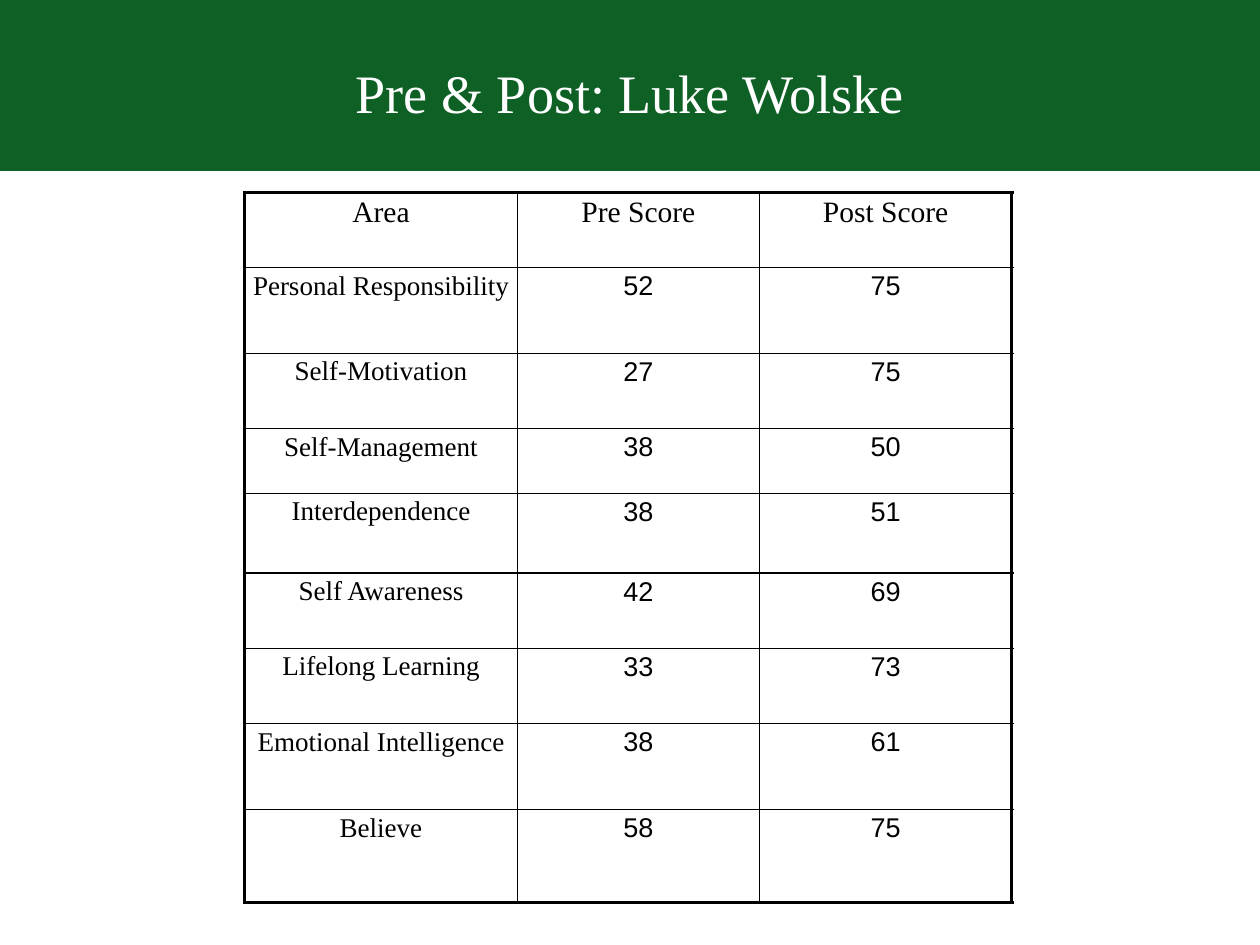
"""Build the slide of scores before and after, by area."""
from typing import Any, NamedTuple

from lxml import etree
from pptx import Presentation
from pptx import dml
from pptx import util as u
from pptx.dml import color as hue
from pptx.enum import shapes, text
from pptx.oxml import ns

GREEN = hue.RGBColor(0x0E, 0x60, 0x25)
WHITE = hue.RGBColor(0xFF, 0xFF, 0xFF)
BLACK = hue.RGBColor(0, 0, 0)
SERIF = "Times New Roman"
SANS = "Arial"
INSET = u.Inches(0.04)
WIDTHS = (3.08, 2.73, 2.85)
HEAD = ("Area", "Pre Score", "Post Score")


class Row(NamedTuple):
    """Hold one scored area and its row height in inches."""
    area: str
    pre: int
    post: int
    height: float


ROWS = (
    Row("Personal Responsibility", 52, 75, 0.97),
    Row("Self-Motivation", 27, 75, 0.85),
    Row("Self-Management", 38, 50, 0.73),
    Row("Interdependence", 38, 51, 0.9),
    Row("Self Awareness", 42, 69, 0.85),
    Row("Lifelong Learning", 33, 73, 0.85),
    Row("Emotional Intelligence", 38, 61, 0.97),
    Row("Believe", 58, 75, 1.05),
)


def apply(item: Any, values: dict[str, Any]) -> None:
    """Set each named attribute of an item."""
    for name, value in values.items():
        setattr(item, name, value)


def inset(item: Any) -> None:
    """Give a cell or text frame even margins."""
    apply(item, {f"margin_{side}": INSET for side in ("left", "top", "right", "bottom")})


def write(frame: Any, words: str, face: str, size: int, tint: hue.RGBColor) -> None:
    """Write one centred line in a text frame."""
    line = frame.paragraphs[0]
    line.alignment = text.PP_ALIGN.CENTER
    run = line.add_run()
    run.text = words
    apply(run.font, {"name": face, "size": u.Pt(size), "bold": False})
    run.font.color.rgb = tint


def edge(cell: Any, side: str, width: int) -> None:
    """Draw one black border of a cell."""
    props = cell._tc.get_or_add_tcPr()
    line = etree.SubElement(props, ns.qn(f"a:ln{side}"), w=str(u.Pt(width)))
    fill = etree.SubElement(line, ns.qn("a:solidFill"))
    etree.SubElement(fill, ns.qn("a:srgbClr"), val=str(BLACK))


def add_band(slide: Any) -> None:
    """Place the green band behind the title."""
    band = slide.shapes.add_shape(
        shapes.MSO_SHAPE.RECTANGLE, u.Inches(-0.01), 0, u.Inches(14.26), u.Inches(1.93))
    band.shadow.inherit = False
    band.fill.solid()
    band.fill.fore_color.rgb = GREEN
    band.line.fill.background()
    slide.shapes.title.element.addprevious(band.element)


def add_title(slide: Any) -> None:
    """Move and fill the title placeholder."""
    title = slide.shapes.title
    apply(title, {"left": u.Inches(1.07), "top": u.Inches(0.15),
                  "width": u.Inches(12.08), "height": u.Inches(1.78)})
    frame = title.text_frame
    inset(frame)
    apply(frame, {"word_wrap": True, "vertical_anchor": text.MSO_ANCHOR.MIDDLE,
                  "auto_size": text.MSO_AUTO_SIZE.NONE})
    write(frame, "Pre & Post: Luke Wolske", SERIF, 44, WHITE)


def add_scores(slide: Any) -> None:
    """Add the table with its heavy outer frame."""
    lines = [HEAD] + [(row.area, str(row.pre), str(row.post)) for row in ROWS]
    highs = [0.85] + [row.height for row in ROWS]
    table = slide.shapes.add_table(
        len(lines), len(HEAD), u.Inches(2.76), u.Inches(2.17),
        u.Inches(sum(WIDTHS)), u.Inches(sum(highs))).table
    apply(table, {"first_row": False, "horz_banding": False})
    for col, width in zip(table.columns, WIDTHS):
        col.width = u.Inches(width)
    for row, high in zip(table.rows, highs):
        row.height = u.Inches(high)
    last = len(lines) - 1
    for y, line in enumerate(lines):
        for x, words in enumerate(line):
            cell = table.cell(y, x)
            inset(cell)
            outer = {"L": x == 0, "R": x == len(HEAD) - 1, "T": y == 0, "B": y == last}
            for side, heavy in outer.items():
                edge(cell, side, 3 if heavy else 1)
            cell.fill.background()
            face = SANS if x and y else SERIF
            write(cell.text_frame, words, face, 22 if y else 24, BLACK)


def main() -> None:
    """Make the slide and save it."""
    deck = Presentation()
    apply(deck, {"slide_width": u.Inches(14.22), "slide_height": u.Inches(10.67)})
    slide = deck.slides.add_slide(deck.slide_layouts[5])
    add_band(slide)
    add_title(slide)
    add_scores(slide)
    deck.save("out.pptx")


if __name__ == "__main__":
    main()
